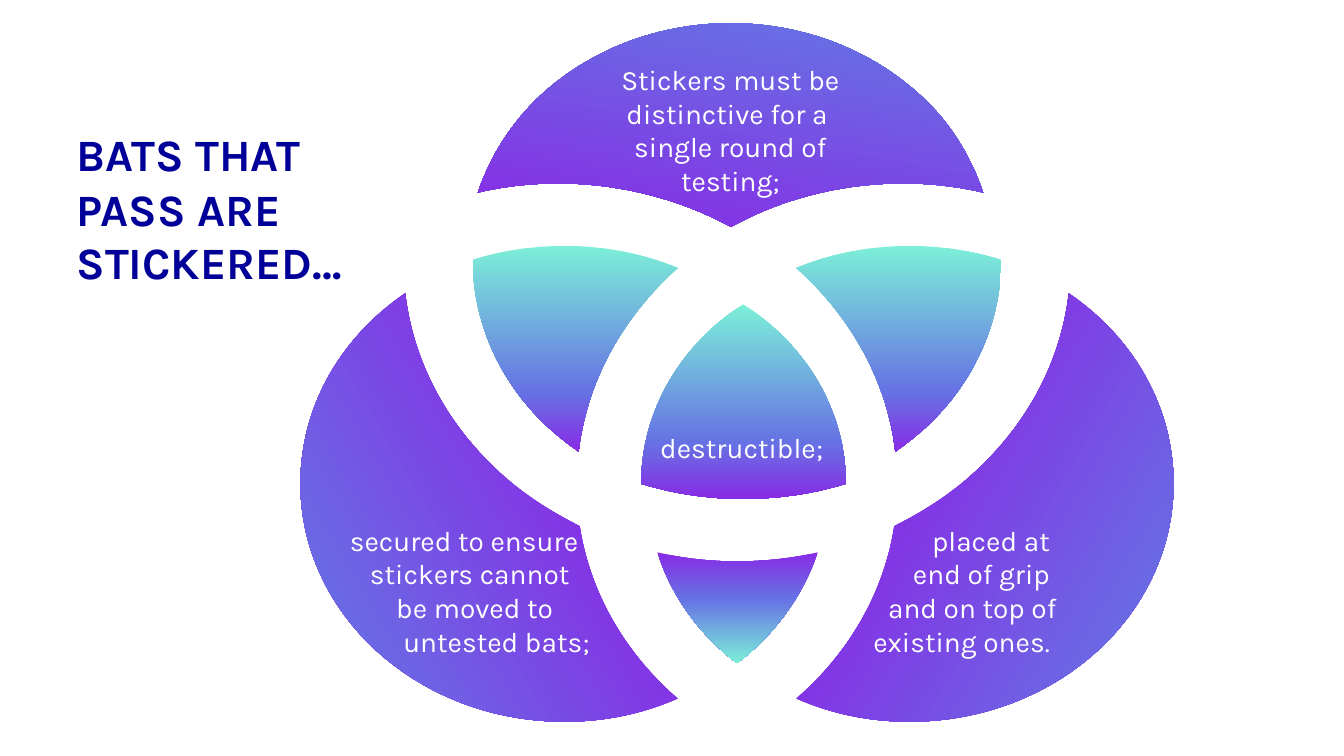
from copy import deepcopy

from pptx import Presentation
from pptx.dml.color import RGBColor
from pptx.enum.text import MSO_AUTO_SIZE, PP_ALIGN
from pptx.oxml.ns import qn
from pptx.util import Pt

PX = 9144
LEFT, CENTER, RIGHT = PP_ALIGN.LEFT, PP_ALIGN.CENTER, PP_ALIGN.RIGHT
GROW = MSO_AUTO_SIZE.SHAPE_TO_FIT_TEXT
VIOLET = RGBColor(0x88, 0x2B, 0xE5)
BLUE = RGBColor(0x66, 0x72, 0xE4)
MINT = RGBColor(0x7C, 0xEF, 0xD8)
NAVY = RGBColor(0x00, 0x00, 0x99)
WHITE = RGBColor(0xFF, 0xFF, 0xFF)

PETAL = [(199, 179), (145, 130), (112, 68), (104, 0), (41, 43), (0, 111), (0, 189),
         (0, 319), (117, 425), (262, 425), (302, 425), (340, 417), (374, 402),
         (321, 356), (287, 296), (277, 231), (249, 217), (222, 200), (199, 179)]
TOP_PETAL = [(251, 225), (302, 197), (361, 182), (422, 182), (449, 182), (475, 185),
             (501, 191), (489, 155), (468, 120), (436, 92), (333, 0), (168, 0), (65, 92),
             (34, 120), (12, 155), (0, 191), (26, 185), (52, 182), (79, 182),
             (140, 182), (199, 197), (251, 225)]
LENS = [(91, 0), (59, 0), (28, 5), (0, 14), (0, 75), (26, 136), (77, 182),
        (86, 190), (95, 197), (105, 204), (113, 135), (148, 71), (203, 22),
        (169, 8), (131, 0), (91, 0)]
BOTTOM_LENS = [(0, 0), (14, 44), (42, 82), (79, 110), (116, 82), (144, 44), (159, 0),
               (133, 6), (106, 9), (79, 9), (52, 9), (26, 6), (0, 0)]
CORE = [(101, 0), (164, 40), (203, 106), (203, 178), (170, 188), (136, 193), (101, 193),
        (67, 193), (33, 188), (0, 178), (0, 106), (39, 40), (101, 0)]

PETAL_STOPS = [(28, VIOLET), (92, BLUE), (100, MINT)]
TOP_STOPS = [(3, MINT), (13, BLUE), (99, VIOLET)]
LENS_STOPS = [(0, MINT), (71, BLUE), (100, VIOLET)]
BOTTOM_STOPS = [(0, VIOLET), (42, BLUE), (100, MINT)]


def curve_outline(sp):
    """Turn each three line segments of an outline into one cubic curve."""
    lines = list(sp._element.iter(qn("a:lnTo")))
    for curve, *others in zip(lines[::3], lines[1::3], lines[2::3]):
        curve.tag = qn("a:cubicBezTo")
        for line in others:
            curve.append(line[0])
            line.getparent().remove(line)


def add_region(shapes, left, top, points, stops, angle, mirror_width=None):
    """Draw one gradient region, flipped when a mirror width is given."""
    outline = [(left + (mirror_width - x if mirror_width else x), top + y) for x, y in points]
    builder = shapes.build_freeform(*outline[0], scale=PX)
    builder.add_line_segments(outline[1:], close=True)
    sp = builder.convert_to_shape()
    curve_outline(sp)
    sp.shadow.inherit = False
    sp.line.fill.background()
    sp.fill.gradient()
    sp.fill.gradient_angle = (360 - angle) % 360
    first = next(sp._element.spPr.iter(qn("a:gs")))
    first.addnext(deepcopy(first))
    for stop, (position, color) in zip(sp.fill.gradient_stops, stops):
        stop.position = position / 100
        stop.color.rgb = color


def add_text(shapes, box, lines, size=20, color=WHITE, bold=False, align=LEFT,
             indents=None, spacing=None, wrap=True):
    """Add a text box with one paragraph per line and return its text frame."""
    tf = shapes.add_textbox(*(n * PX for n in box)).text_frame
    tf.word_wrap = wrap
    tf.auto_size = GROW
    if wrap:
        tf.margin_left = tf.margin_top = tf.margin_right = tf.margin_bottom = 0
    for i, line in enumerate(lines):
        p = tf.paragraphs[0] if i == 0 else tf.add_paragraph()
        p.alignment = align
        if spacing:
            p.line_spacing = Pt(spacing)
        if indents:
            p._p.get_or_add_pPr().set("marL", str(indents[i] * PX))
        r = p.add_run()
        r.text = line
        r.font.name, r.font.size, r.font.bold = "Karla", Pt(size), bold
        r.font.color.rgb = color
    return tf


def add_diagram(shapes, left, top):
    """Draw the three-circle diagram with its labels."""
    add_region(shapes, left, top + 291, PETAL, PETAL_STOPS, 150)
    add_region(shapes, left + 176, top, TOP_PETAL, TOP_STOPS, 100)
    add_region(shapes, left + 492, top + 291, PETAL, PETAL_STOPS, 30, mirror_width=374)
    add_region(shapes, left + 354, top + 548, BOTTOM_LENS, BOTTOM_STOPS, 90)
    add_region(shapes, left + 492, top + 244, LENS, LENS_STOPS, 90, mirror_width=203)
    add_region(shapes, left + 171, top + 244, LENS, LENS_STOPS, 90)
    add_region(shapes, left + 338, top + 302, CORE, LENS_STOPS, 90)
    add_text(shapes, (left + 547, top + 519, 203, 135),
             ["placed at ", "end of grip ", "and on top of existing ones. "], align=RIGHT)
    add_text(shapes, (left + 49, top + 519, 246, 135),
             ["secured to ensure", "stickers cannot", "be moved to", "untested bats;"],
             indents=[0, 20, 46, 53])
    add_text(shapes, (left + 288, top + 62, 277, 135),
             ["Stickers must be distinctive for a ", "single round of testing;"], align=CENTER)


def add_title(shapes, left, top):
    """Place the heading beside the diagram."""
    tf = add_text(shapes, (left, top, 394, 168), ["BATS THAT", "PASS ARE", "STICKERED…"],
                  size=32, color=NAVY, bold=True, spacing=40)
    r = tf.paragraphs[-1].add_run()
    r.text = " "
    r.font.name, r.font.size, r.font.bold = "Lato", Pt(44), True
    r.font.color.rgb = NAVY


def main():
    """Build and save the slide."""
    prs = Presentation()
    prs.slide_width, prs.slide_height = 1333 * PX, 750 * PX
    s = prs.slides.add_slide(prs.slide_layouts[6])
    add_diagram(s.shapes.add_group_shape().shapes, 298, 0)
    add_title(s.shapes, 76, 123)
    add_text(s.shapes, (645, 422, 184, 44), ["destructible;"], wrap=False)
    prs.save("out.pptx")


if __name__ == "__main__":
    main()
